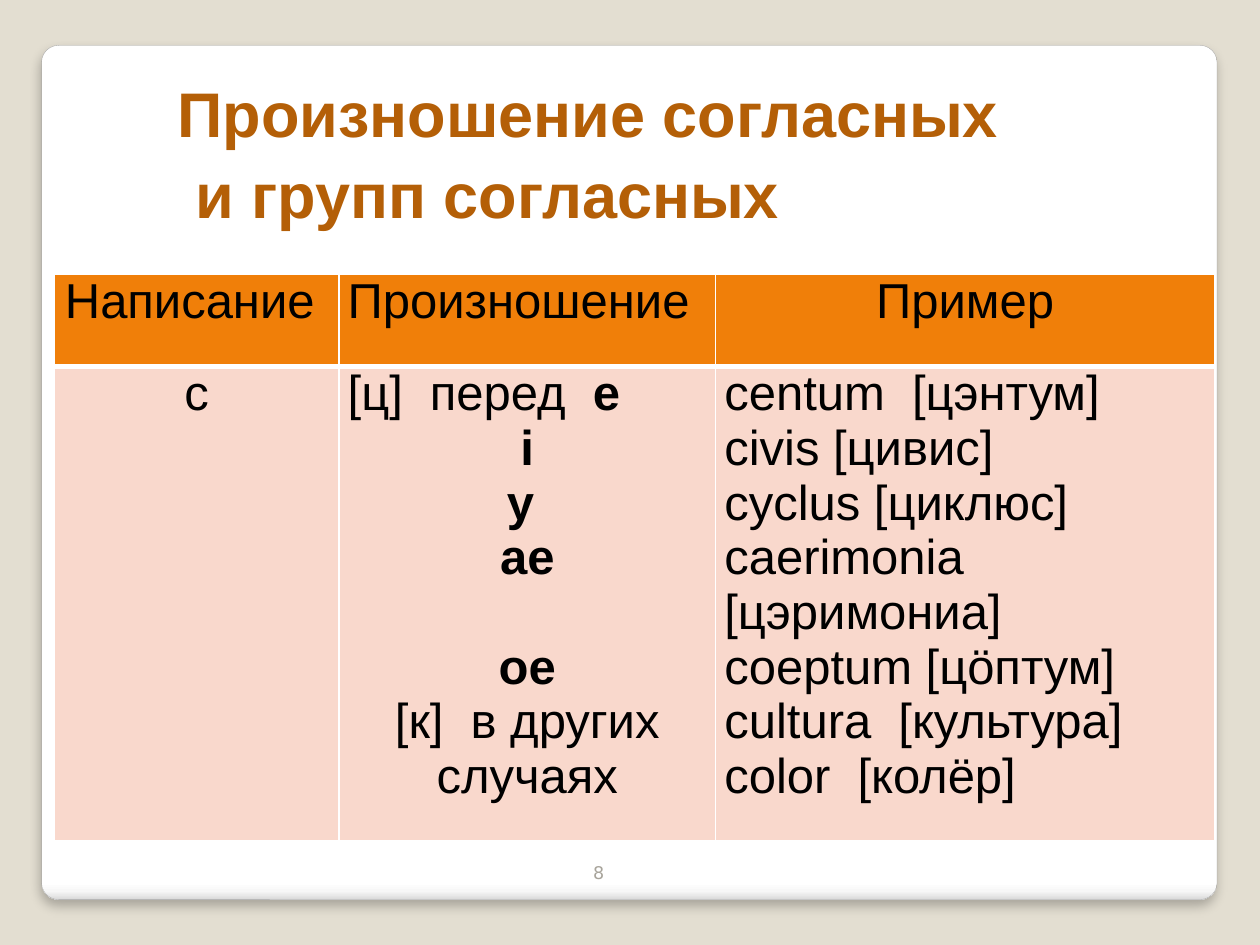
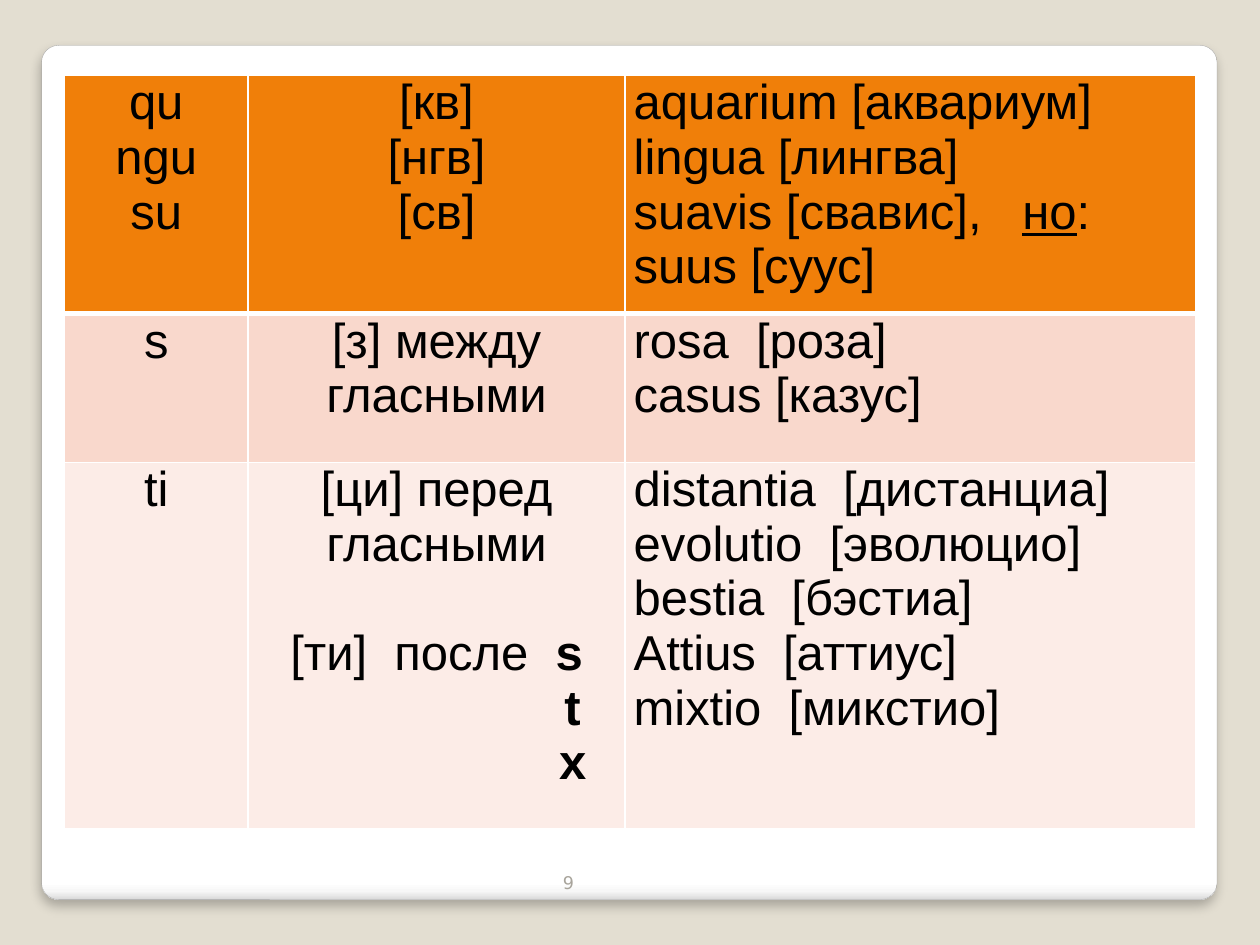
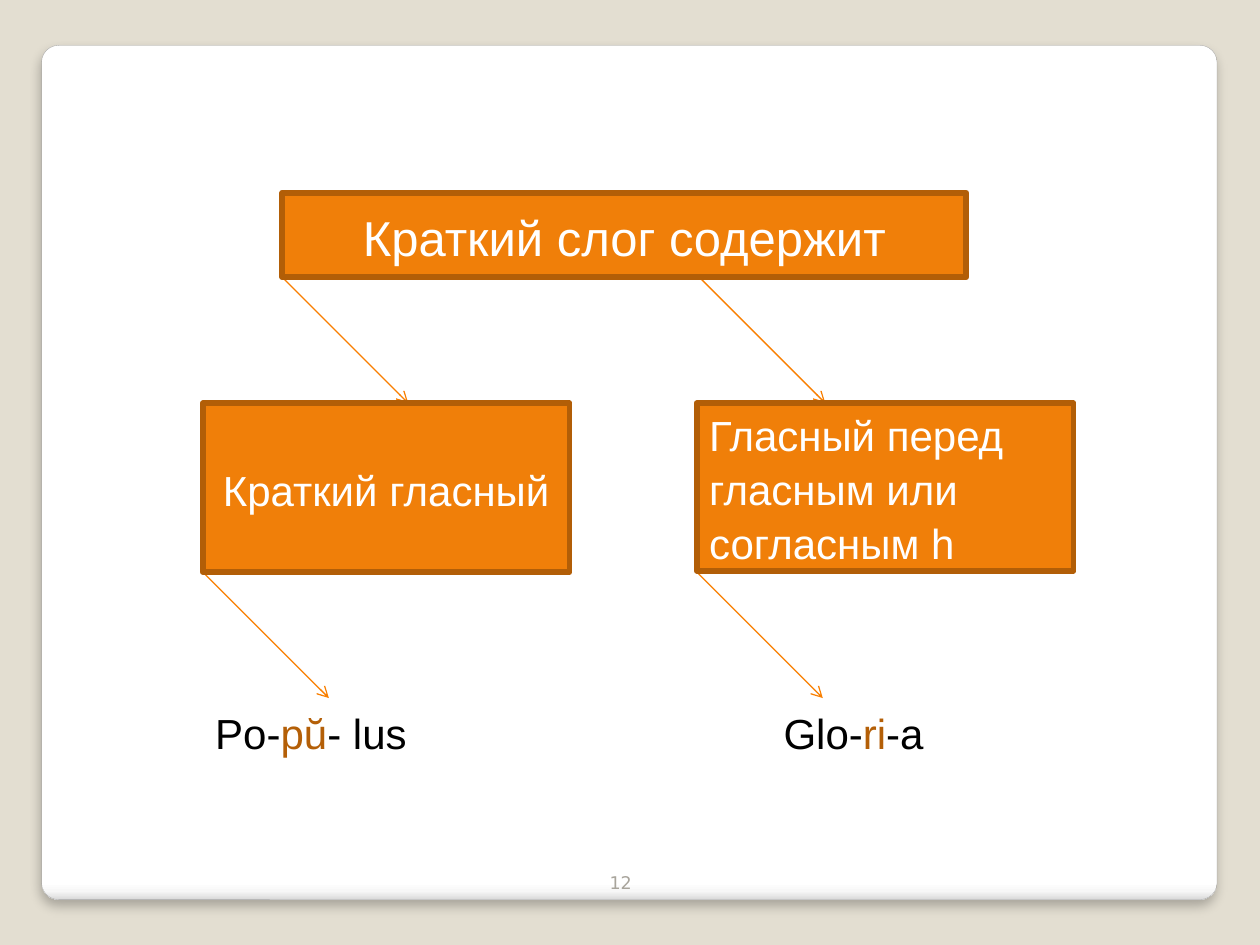
from dataclasses import dataclass

from lxml.etree import SubElement
from pptx import Presentation
from pptx.dml.color import RGBColor
from pptx.enum.shapes import MSO_CONNECTOR, MSO_SHAPE
from pptx.enum.text import MSO_ANCHOR, MSO_AUTO_SIZE, PP_ALIGN
from pptx.oxml.ns import qn
from pptx.util import Inches, Pt

HUES = {
    "page": "E3DED1", "white": "FFFFFF", "edge": "A4A4A4", "black": "000000",
    "head": "F07F09", "odd": "F9D8CC", "even": "FCECE7", "rim": "B25E07",
    "title": "B45F07", "arrow": "F97F00", "num": "A8A49B",
}
STOPS = ((0, "FFFFFF"), (98, "FFFFFF"), (99, "F7F7F7"), (100, "DADADA"))
SIDES = ("a:lnL", "a:lnR", "a:lnT", "a:lnB")
FONT = "Arial"
LEAD = 1.07


@dataclass
class Bit:
    text: str
    bold: bool = False
    under: bool = False
    hue: str = ""


@dataclass
class Line:
    bits: list
    mid: bool = False
    gap: float = 0
    left: float = 0


@dataclass
class Style:
    size: float
    hue: str = "black"
    bold: bool = False
    font: str = FONT
    lead: float = 1.0


@dataclass
class Area:
    left: float
    top: float
    wide: float
    high: float

    def rect(self) -> tuple:
        return tuple(Inches(n) for n in (self.left, self.top, self.wide, self.high))


@dataclass
class Box:
    area: Area
    line: Line
    size: int


@dataclass
class Grid:
    left: float
    top: float
    cols: tuple
    rows: tuple
    cells: list


def tint(name: str) -> RGBColor:
    return RGBColor.from_string(HUES[name])


def row(*texts: str, mid: bool = False) -> list:
    return [Line([Bit(text)], mid) for text in texts]


def bold(text: str, **form) -> Line:
    return Line([Bit(text, bold=True)], True, **form)


def write(frame, lines: list, style: Style) -> None:
    frame.text = "\n".join("" for _ in lines)
    for para, line in zip(frame.paragraphs, lines):
        para.alignment = PP_ALIGN.CENTER if line.mid else PP_ALIGN.LEFT
        para.line_spacing = style.lead
        para.space_before = Pt(line.gap)
        if line.left:
            props = para._p.get_or_add_pPr()
            props.set("marL", str(Inches(line.left)))
            props.set("indent", "0")
        for bit in line.bits:
            run = para.add_run()
            run.text = bit.text
            font = run.font
            font.name, font.size = style.font, Pt(style.size)
            font.bold = bit.bold or style.bold
            font.underline = bit.under
            font.color.rgb = tint(bit.hue or style.hue)


def frame(deck, slide) -> None:
    """Set the page colour and move the white panel to the master."""
    fill = deck.slide_master.background.fill
    fill.solid()
    fill.fore_color.rgb = tint("page")
    panel = slide.shapes.add_shape(
        MSO_SHAPE.ROUNDED_RECTANGLE, *Area(0.33, 0.36, 9.33, 6.78).rect())
    panel.adjustments[0] = 0.02
    panel.fill.gradient()
    panel.fill.gradient_angle = 270
    stops = panel.element.find(".//" + qn("a:gsLst"))
    for old in list(stops):
        stops.remove(old)
    for pos, hue in STOPS:
        stop = SubElement(stops, qn("a:gs"), pos=str(pos * 1000))
        SubElement(stop, qn("a:srgbClr"), val=hue)
    panel.line.color.rgb = tint("edge")
    panel.line.width = Pt(0.16)
    panel.shadow.inherit = False
    glow = SubElement(
        panel.element.spPr.find(qn("a:effectLst")), qn("a:outerShdw"),
        blurRad=str(Pt(6)), dist=str(Pt(4)), dir="5400000", rotWithShape="0")
    shade = SubElement(glow, qn("a:srgbClr"), val=HUES["black"])
    SubElement(shade, qn("a:alpha"), val="25000")
    deck.slide_master.shapes.element.insert(2, panel.element)


def label(slide, area: Area, line: Line, style: Style, low: bool = False) -> None:
    text = slide.shapes.add_textbox(*area.rect()).text_frame
    text.word_wrap = True
    text.vertical_anchor = MSO_ANCHOR.BOTTOM if low else MSO_ANCHOR.TOP
    write(text, [line], style)


def number(slide, left: float, top: float, text: str) -> None:
    style = Style(10, "num", font="DejaVu Sans")
    label(slide, Area(left, top, 2.5, 0.4), Line([Bit(text)]), style, True)


def heading(slide, area: Area, lines: list) -> None:
    shape = slide.shapes.title
    shape.left, shape.top, shape.width, shape.height = area.rect()
    text = shape.text_frame
    text.word_wrap = True
    text.auto_size = MSO_AUTO_SIZE.NONE
    text.vertical_anchor = MSO_ANCHOR.TOP
    write(text, lines, Style(36, "title", True, lead=LEAD))


def border(cell, head: bool) -> None:
    props = cell._tc.get_or_add_tcPr()
    for at, side in enumerate(SIDES):
        width = 3 if head and side == "a:lnB" else 1
        line = props.makeelement(qn(side), {"w": str(Pt(width))})
        fill = SubElement(line, qn("a:solidFill"))
        SubElement(fill, qn("a:srgbClr"), val=HUES["white"])
        props.insert(at, line)


def table(slide, grid: Grid) -> None:
    area = Area(grid.left, grid.top, sum(grid.cols), sum(grid.rows))
    body = slide.shapes.add_table(
        len(grid.rows), len(grid.cols), *area.rect()).table
    body.first_row = body.horz_banding = False
    for col, wide in zip(body.columns, grid.cols):
        col.width = Inches(wide)
    for at, high in enumerate(grid.rows):
        body.rows[at].height = Inches(high)
        hue = ("head", "odd", "even")[at]
        for cell, lines in zip(body.rows[at].cells, grid.cells[at]):
            cell.margin_left = cell.margin_right = Inches(0.07)
            cell.margin_top = cell.margin_bottom = 0
            cell.fill.solid()
            cell.fill.fore_color.rgb = tint(hue)
            border(cell, at == 0)
            write(cell.text_frame, lines, Style(28))


def block(slide, box: Box) -> None:
    shape = slide.shapes.add_shape(
        MSO_SHAPE.FLOWCHART_PROCESS, *box.area.rect())
    shape.shadow.inherit = False
    shape.fill.solid()
    shape.fill.fore_color.rgb = tint("head")
    shape.line.color.rgb = tint("rim")
    shape.line.width = Pt(3.35)
    text = shape.text_frame
    text.word_wrap = True
    text.vertical_anchor = MSO_ANCHOR.MIDDLE
    write(text, [box.line], Style(box.size, "white", lead=LEAD))


def arrow(slide, left: float, top: float) -> None:
    """Draw a slanted arrow one inch down and to the right."""
    ends = (Inches(n) for n in (left, top, left + 1, top + 1))
    link = slide.shapes.add_connector(MSO_CONNECTOR.STRAIGHT, *ends)
    link.line.color.rgb = tint("arrow")
    link.line.width = Pt(0.75)
    props = link.element.spPr
    SubElement(props.find(qn("a:ln")), qn("a:tailEnd"), type="arrow")
    SubElement(props, qn("a:effectLst"))


FIRST = Grid(0.43, 2.18, (2.26, 2.99, 3.96), (0.73, 3.76), [
    [row("Написание ", mid=True), row("Произношение"), row("Пример", mid=True)],
    [
        row("с", mid=True),
        [Line([Bit("[ц]  перед  "), Bit("e", bold=True)]),
         bold("i"), bold("y "), bold("ae"), bold("оe", gap=31.3),
         *row("[к]  в других случаях", mid=True)],
        row("centum  [цэнтум]", "civis [цивис]", "cyclus [циклюс]",
            "caerimonia [цэримониа]", "coeptum [цöптум]",
            "cultura  [культура]", "color  [колёр]"),
    ],
])

SECOND = Grid(0.51, 0.6, (1.46, 2.99, 4.53), (1.89, 1.18, 2.91), [
    [
        row("qu", "ngu", "su", mid=True),
        row("[кв]", "[нгв]", "[св]", mid=True),
        [*row("aquarium [аквариум]", "lingua [лингва]"),
         Line([Bit("suavis [свавис],   "), Bit("но", under=True),
               Bit(": suus [суус]")])],
    ],
    [
        row("s", mid=True),
        row("[з] между гласными", mid=True),
        row("rosa  [роза]", "casus [казус]"),
    ],
    [
        row("ti", mid=True),
        [*row("[ци] перед гласными", mid=True),
         Line([Bit("[ти]  после  "), Bit("s", bold=True)], True, 31.3),
         bold("t", left=2.16), bold("x", left=2.16)],
        row("distantia  [дистанциа]", "evolutio  [эволюцио]",
            "bestia  [бэстиа]", "Attius  [аттиус]", "mixtio  [микстио]"),
    ],
])

BOXES = (
    Box(Area(2.24, 1.53, 5.43, 0.67), Line([Bit("Краткий слог содержит")], True), 28),
    Box(Area(1.61, 3.2, 2.91, 1.34), Line([Bit("Краткий гласный")], True), 24),
    Box(Area(5.53, 3.2, 2.99, 1.33),
        Line([Bit("Гласный перед гласным или согласным h")]), 24),
)
ARROWS = ((2.24, 2.2), (5.55, 2.2), (1.61, 4.54), (5.53, 4.54))
WORDS = (
    (Area(1.61, 5.54, 1.73, 0.5), ("Po-", "pŭ", "- lus")),
    (Area(6.12, 5.54, 2.45, 0.5), ("Glo-", "ri", "-a")),
)


def main() -> None:
    deck = Presentation()
    deck.slide_width, deck.slide_height = Inches(10), Inches(7.5)
    plain = deck.slide_layouts[6]

    slide = deck.slides.add_slide(deck.slide_layouts[5])
    frame(deck, slide)
    heading(slide, Area(1.31, 0.5, 6.78, 1.31), [
        Line([Bit("Произношение согласных")]),
        Line([Bit("и групп согласных")], left=0.14),
    ])
    table(slide, FIRST)
    number(slide, 4.61, 6.66, "8")

    slide = deck.slides.add_slide(plain)
    table(slide, SECOND)
    number(slide, 4.37, 6.74, "9")

    slide = deck.slides.add_slide(plain)
    for left, top in ARROWS:
        arrow(slide, left, top)
    for box in BOXES:
        block(slide, box)
    for area, (start, core, end) in WORDS:
        line = Line([Bit(start), Bit(core, hue="title"), Bit(end)])
        label(slide, area, line, Style(24, lead=LEAD))
    number(slide, 4.74, 6.74, "12")
    deck.save("out.pptx")


if __name__ == "__main__":
    main()
